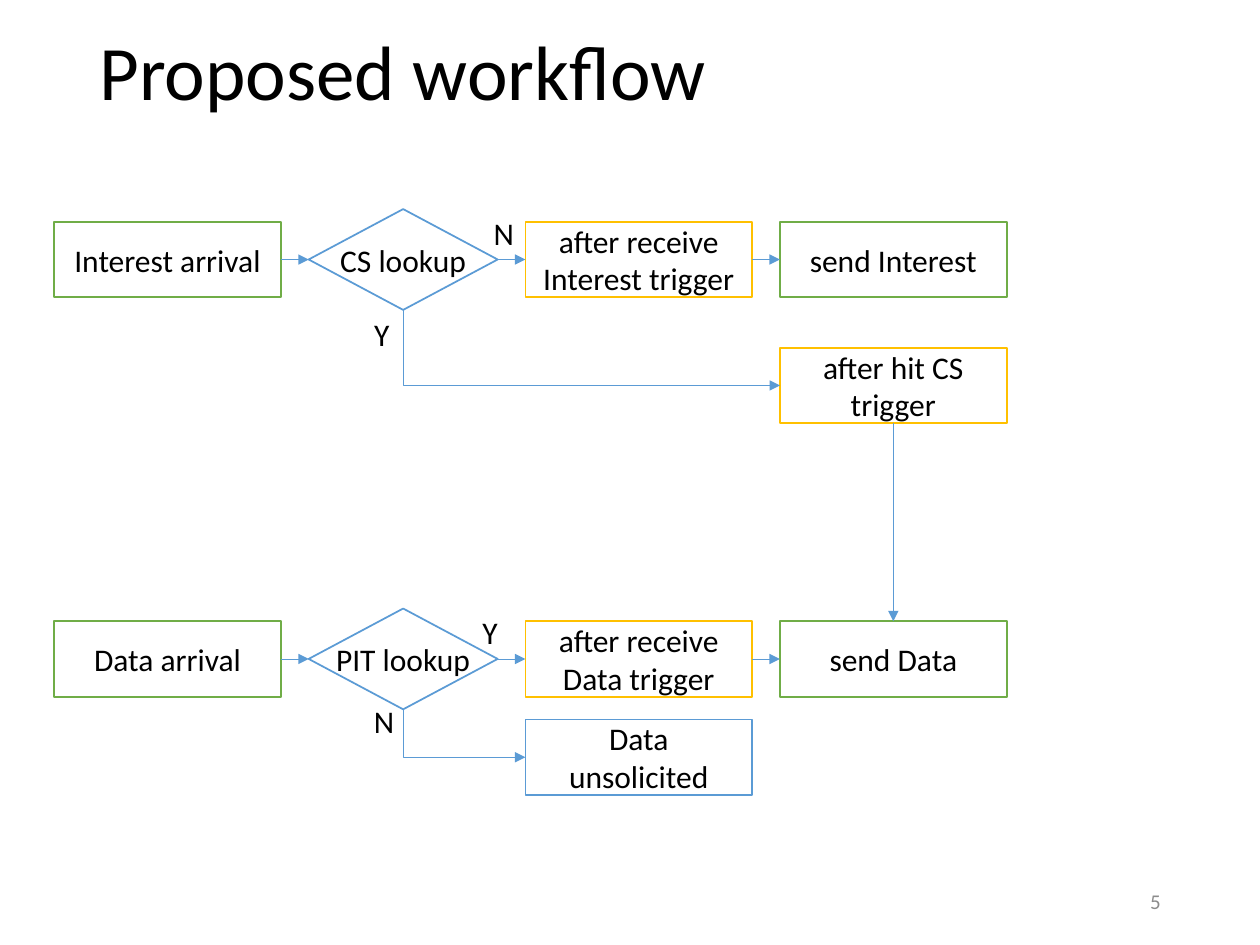
from lxml.etree import SubElement
from pptx import Presentation
from pptx.dml.color import RGBColor
from pptx.enum.shapes import MSO_CONNECTOR as CONN, MSO_SHAPE as SHAPE
from pptx.enum.text import MSO_ANCHOR as ANCHOR, MSO_AUTO_SIZE as AUTO, PP_ALIGN as ALIGN
from pptx.oxml.ns import qn
from pptx.util import Inches, Pt

FONT = "Calibri"
BLACK = RGBColor(0x00, 0x00, 0x00)
WHITE = RGBColor(0xFF, 0xFF, 0xFF)
GRAY = RGBColor(0x8C, 0x8C, 0x8C)
GREEN = RGBColor(0x70, 0xAD, 0x47)
BLUE = RGBColor(0x5B, 0x9B, 0xD5)
AMBER = RGBColor(0xFF, 0xC0, 0x00)

# Grid: four columns with equal gaps, and the centre line of each row
LEFT, GAP = 0.43, 0.22
WIDTHS = [1.8, 1.5, 1.8, 1.8]
COLS = [LEFT + sum(WIDTHS[:i]) + i * GAP for i in range(len(WIDTHS))]
INTEREST, HIT, DATA, UNSOLICITED = 2.06, 3.06, 5.23, 6.01
BOX_H, DIAMOND_H = 0.6, 0.8
TOP, LEFT_SIDE, BOTTOM, RIGHT_SIDE = range(4)


def set_text(sp, text, size=18, color=BLACK, align=ALIGN.LEFT, wrap=True):
    tf = sp.text_frame
    tf.text = text
    tf.word_wrap = wrap
    p = tf.paragraphs[0]
    p.alignment = align
    font = p.runs[0].font
    font.name, font.size, font.color.rgb = FONT, Pt(size), color
    return tf


def add_node(slide, text, col, row, color, kind=SHAPE.RECTANGLE):
    is_box = kind == SHAPE.RECTANGLE
    height = BOX_H if is_box else DIAMOND_H
    sp = slide.shapes.add_shape(kind, Inches(COLS[col]), Inches(row - height / 2),
                                Inches(WIDTHS[col]), Inches(height))
    sp.shadow.inherit = False
    sp.fill.solid()
    sp.fill.fore_color.rgb = WHITE
    sp.line.color.rgb = color
    sp.line.width = Pt(1)
    tf = set_text(sp, text, align=ALIGN.CENTER, wrap=is_box)
    tf.vertical_anchor = ANCHOR.MIDDLE
    return sp


def add_arrow(slide, start, end, start_side=RIGHT_SIDE, end_side=LEFT_SIDE, kind=CONN.STRAIGHT):
    line = slide.shapes.add_connector(kind, 0, 0, 0, 0)
    line.begin_connect(start, start_side)
    line.end_connect(end, end_side)
    line.line.color.rgb = BLUE
    line.line.width = Pt(0.5)
    SubElement(line.line._get_or_add_ln(), qn("a:tailEnd"), type="triangle")
    SubElement(line._element.spPr, qn("a:effectLst"))
    return line


def add_corner_arrow(slide, start, end):
    """Goes down from the start, then right to the end, with one bend."""
    line = add_arrow(slide, start, end, BOTTOM, LEFT_SIDE, CONN.ELBOW)
    x, y, w, h = line.left, line.top, line.width, line.height
    # The bend is a mirrored preset turned by 270 degrees about its centre
    line.left, line.top = x + (w - h) // 2, y + (h - w) // 2
    line.width, line.height = h, w
    sp_pr = line._element.spPr
    xfrm = sp_pr.find(qn("a:xfrm"))
    xfrm.set("rot", str(270 * 60000))
    xfrm.set("flipH", "1")
    sp_pr.find(qn("a:prstGeom")).set("prst", "bentConnector2")


def add_label(slide, text, x, y):
    width = 0.32 if text == "Y" else 0.36
    sp = slide.shapes.add_textbox(Inches(x), Inches(y), Inches(width), Inches(0.4))
    set_text(sp, text, wrap=False).auto_size = AUTO.SHAPE_TO_FIT_TEXT


def add_title(slide, text):
    title = slide.shapes.title
    title.left, title.top = Inches(0.69), Inches(0.2)
    title.width, title.height = Inches(8.62), Inches(0.8)
    tf = set_text(title, text, size=44)
    tf.vertical_anchor = ANCHOR.MIDDLE
    tf.paragraphs[0].line_spacing = 0.9


def add_page_number(slide, number):
    sp = slide.shapes.add_textbox(Inches(7.06), Inches(6.95), Inches(2.25), Inches(0.4))
    tf = set_text(sp, number, size=12, color=GRAY, align=ALIGN.RIGHT)
    tf.vertical_anchor = ANCHOR.MIDDLE


def add_flow(slide, row, arrival, lookup, trigger, send):
    """One row of four nodes, each joined to the next."""
    nodes = [
        add_node(slide, arrival, 0, row, GREEN),
        add_node(slide, lookup, 1, row, BLUE, SHAPE.FLOWCHART_DECISION),
        add_node(slide, trigger, 2, row, AMBER),
        add_node(slide, send, 3, row, GREEN),
    ]
    for start, end in zip(nodes, nodes[1:]):
        add_arrow(slide, start, end)
    return nodes


def main():
    prs = Presentation()
    prs.slide_width, prs.slide_height = Inches(10), Inches(7.5)
    slide = prs.slides.add_slide(prs.slide_layouts[5])
    add_title(slide, "Proposed workflow")

    # Main rows
    _, cs_lookup, _, _ = add_flow(slide, INTEREST, "Interest arrival", "CS lookup",
                                  "after receive Interest trigger", "send Interest")
    _, pit_lookup, _, send_data = add_flow(slide, DATA, "Data arrival", "PIT lookup",
                                           "after receive Data trigger", "send Data")

    # Branches
    hit = add_node(slide, "after hit CS trigger", 3, HIT, AMBER)
    unsolicited = add_node(slide, "Data unsolicited", 2, UNSOLICITED, BLUE)
    add_corner_arrow(slide, cs_lookup, hit)
    add_corner_arrow(slide, pit_lookup, unsolicited)
    add_arrow(slide, hit, send_data, BOTTOM, TOP)

    # Branch labels
    for text, x, y in [("Y", 2.87, 2.45), ("N", 3.82, 1.65),
                       ("Y", 3.73, 4.82), ("N", 2.87, 5.52)]:
        add_label(slide, text, x, y)

    add_page_number(slide, "5")
    prs.save("out.pptx")


if __name__ == "__main__":
    main()
